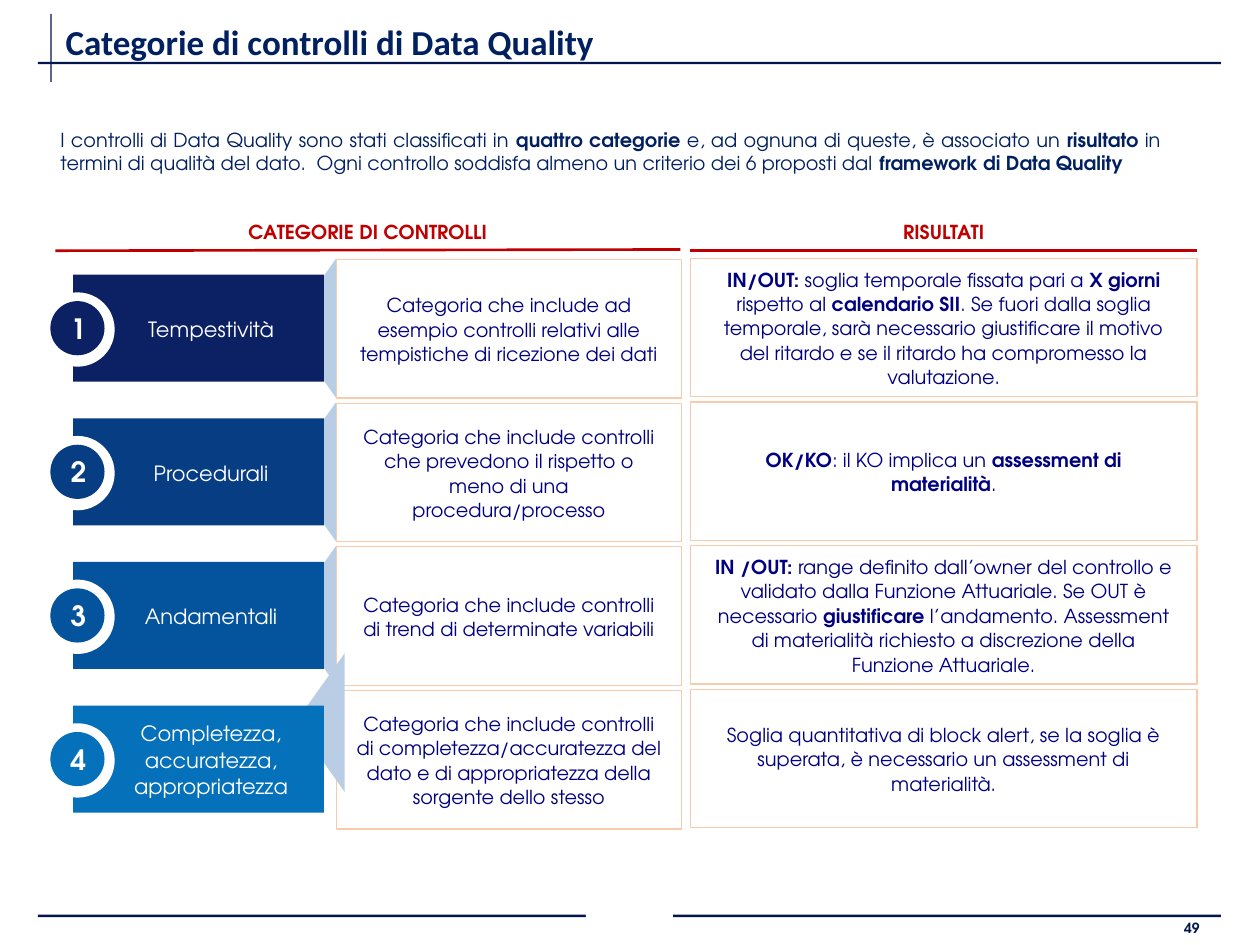
from lxml import etree
from pptx import Presentation
from pptx import util as u
from pptx.dml.color import RGBColor
from pptx.enum import shapes, text
from pptx.oxml.ns import qn

COLORS = {
    "frame": "03174E", "title": "002060", "accent": "C00000", "body": "000080",
    "border": "F8CBAD", "arrow": "B9CDE5", "white": "FFFFFF",
}
SHAPE = shapes.MSO_SHAPE
CENTER, JUSTIFY = text.PP_ALIGN.CENTER, text.PP_ALIGN.JUSTIFY
MIDDLE, TOP = text.MSO_ANCHOR.MIDDLE, text.MSO_ANCHOR.TOP
DEFAULT_INSETS = (0.1, 0.05, 0.1, 0.05)


def rgb(color):
    return RGBColor.from_string(COLORS.get(color, color))


class SlideBuilder:
    font = "TeX Gyre Adventor"

    def __init__(self, slide):
        self.slide = slide

    def set_text(self, shape, content, size, color, bold=False, align=None,
                 anchor=TOP, insets=DEFAULT_INSETS, spacing=None, font=None):
        """Fill a shape with one paragraph; ** toggles bold."""
        frame = shape.text_frame
        frame.word_wrap = True
        frame.vertical_anchor = anchor
        (frame.margin_left, frame.margin_top,
         frame.margin_right, frame.margin_bottom) = map(u.Inches, insets)
        paragraph = frame.paragraphs[0]
        paragraph.alignment = align
        paragraph.line_spacing = spacing
        for index, part in enumerate(content.split("**")):
            if part:
                run = paragraph.add_run()
                run.text = part
                run.font.name = font or self.font
                run.font.size = u.Pt(size)
                run.font.bold = bold or index % 2 == 1
                run.font.color.rgb = rgb(color)

    def title(self, box, content):
        title = self.slide.shapes.title
        title.left, title.top, title.width, title.height = map(u.Inches, box)
        self.set_text(title, content, 20, "title", bold=True,
                      align=text.PP_ALIGN.LEFT, spacing=0.9, font="Calibri")

    def label(self, box, content, size, color, **style):
        label = self.slide.shapes.add_textbox(*map(u.Inches, box))
        self.set_text(label, content, size, color, **style)

    def shape(self, kind, box, fill, border=None, rotation=0):
        shape = self.slide.shapes.add_shape(kind, *map(u.Inches, box))
        shape.shadow.inherit = False
        shape.rotation = rotation
        shape.fill.solid()
        shape.fill.fore_color.rgb = rgb(fill)
        if border:
            shape.line.color.rgb = rgb(border)
            shape.line.width = u.Pt(0.75)
        else:
            shape.line.fill.background()
        return shape

    def line(self, start, end):
        line = self.slide.shapes.add_connector(
            shapes.MSO_CONNECTOR.STRAIGHT, *map(u.Inches, start + end))
        line.line.color.rgb = rgb("accent")
        line.line.width = u.Pt(1.5)
        etree.SubElement(line._element.spPr, qn("a:effectLst"))

    def card(self, box, content):
        card = self.shape(SHAPE.RECTANGLE, box, "white", "border")
        self.set_text(card, content, 11, "body", align=CENTER, anchor=MIDDLE,
                      insets=(0.16, 0, 0.16, 0), spacing=1.06)

    def category(self, top, number, name, fill):
        bar = self.shape(SHAPE.RECTANGLE, (0.58, top + 0.13, 1.99, 0.85), fill)
        self.set_text(bar, name, 12, "white", align=CENTER, anchor=MIDDLE,
                      insets=(0.24, 0.08, 0.04, 0.08), spacing=1.06)
        self.shape(SHAPE.OVAL, (0.32, top + 0.27, 0.59, 0.59), "white")
        badge = self.shape(SHAPE.OVAL, (0.4, top + 0.34, 0.43, 0.43), fill)
        self.set_text(badge, str(number), 16, "white", bold=True,
                      align=CENTER, anchor=MIDDLE)


# Name, colour, description, result, arrow position (left, offset from row top)
CATEGORIES = [
    ("Tempestività", "0C2164",
     "Categoria che include ad esempio controlli relativi alle tempistiche "
     "di ricezione dei dati",
     "**IN/OUT: **soglia temporale fissata pari a **X giorni **rispetto al "
     "**calendario SII**. Se fuori dalla soglia temporale, sarà necessario "
     "giustificare il motivo del ritardo e se il ritardo ha compromesso la "
     "valutazione.", (1.92, 0.36)),
    ("Procedurali", "073D83",
     "Categoria che include controlli che prevedono il rispetto o meno di una "
     "procedura/processo",
     "**OK/KO**: il KO implica un **assessment di materialità**.",
     (1.92, 0.36)),
    ("Andamentali", "04549D",
     "Categoria che include controlli di trend di determinate variabili",
     "**IN /OUT: **range definito dall’owner del controllo e validato dalla "
     "Funzione Attuariale. Se OUT è necessario **giustificare** l’andamento. "
     "Assessment di materialità richiesto a discrezione della Funzione "
     "Attuariale.", (1.92, 0.36)),
    ("Completezza, accuratezza, appropriatezza", "0471BA",
     "Categoria che include controlli di completezza/accuratezza del dato e "
     "di appropriatezza della sorgente dello stesso",
     "Soglia quantitativa di block alert, se la soglia è superata, è "
     "necessario un assessment di materialità.", (1.99, 0.07)),
]
FIRST_ROW, ROW_STEP, CARD_HEIGHT = 2.05, 1.14, 1.1


def main():
    deck = Presentation()
    deck.slide_width, deck.slide_height = u.Inches(10), u.Inches(7.5)
    page = SlideBuilder(deck.slides.add_slide(deck.slide_layouts[5]))

    # Frame rules, with a gap in the bottom one
    for box, fill in [((0.3, 7.26, 9.39, 0.02), "frame"),
                      ((4.65, 7.09, 0.69, 0.34), "white"),
                      ((0.4, 0.11, 0.01, 0.54), "frame"),
                      ((0.3, 0.49, 9.39, 0.02), "frame")]:
        page.shape(SHAPE.RECTANGLE, box, fill)

    # Title, page number and introduction
    page.title((0.42, 0.15, 8.81, 0.33), "Categorie di controlli di Data Quality")
    page.label((9.3, 7.25, 0.4, 0.24), "49", 8, "frame", bold=True)
    page.label(
        (0.32, 0.8, 9.05, 0.8),
        "I controlli di Data Quality sono stati classificati in **quattro "
        "categorie **e, ad ognuna di queste, è associato un **risultato** in "
        "termini di qualità del dato.  Ogni controllo soddisfa almeno un "
        "criterio dei 6 proposti dal **framework di Data Quality**",
        11, "title", align=JUSTIFY, anchor=MIDDLE,
        insets=(0.16, 0.05, 0.16, 0.05))

    # Column headings
    for heading, left, start, end in [
            ("CATEGORIE DI CONTROLLI", 1.48, (0.44, 1.99), (5.4, 1.98)),
            ("RISULTATI", 6.05, (5.48, 1.99), (9.5, 1.99))]:
        page.line(start, end)
        page.label((left, 1.75, 2.88, 0.19), heading, 11, "accent", bold=True,
                   align=CENTER, insets=(0, 0, 0, 0))

    # One row per category: description, arrow, name and result
    for index, (name, fill, description, result, arrow) in enumerate(CATEGORIES):
        top = FIRST_ROW + index * ROW_STEP
        arrow_left, arrow_offset = arrow
        page.card((2.67, top + 0.01, 2.74, CARD_HEIGHT), description)
        page.shape(SHAPE.ISOSCELES_TRIANGLE,
                   (arrow_left, top + arrow_offset, CARD_HEIGHT, 0.39),
                   "arrow", rotation=270)
        page.category(top, index + 1, name, fill)
        page.card((5.48, top, 4.02, CARD_HEIGHT), result)

    deck.save("out.pptx")


if __name__ == "__main__":
    main()
